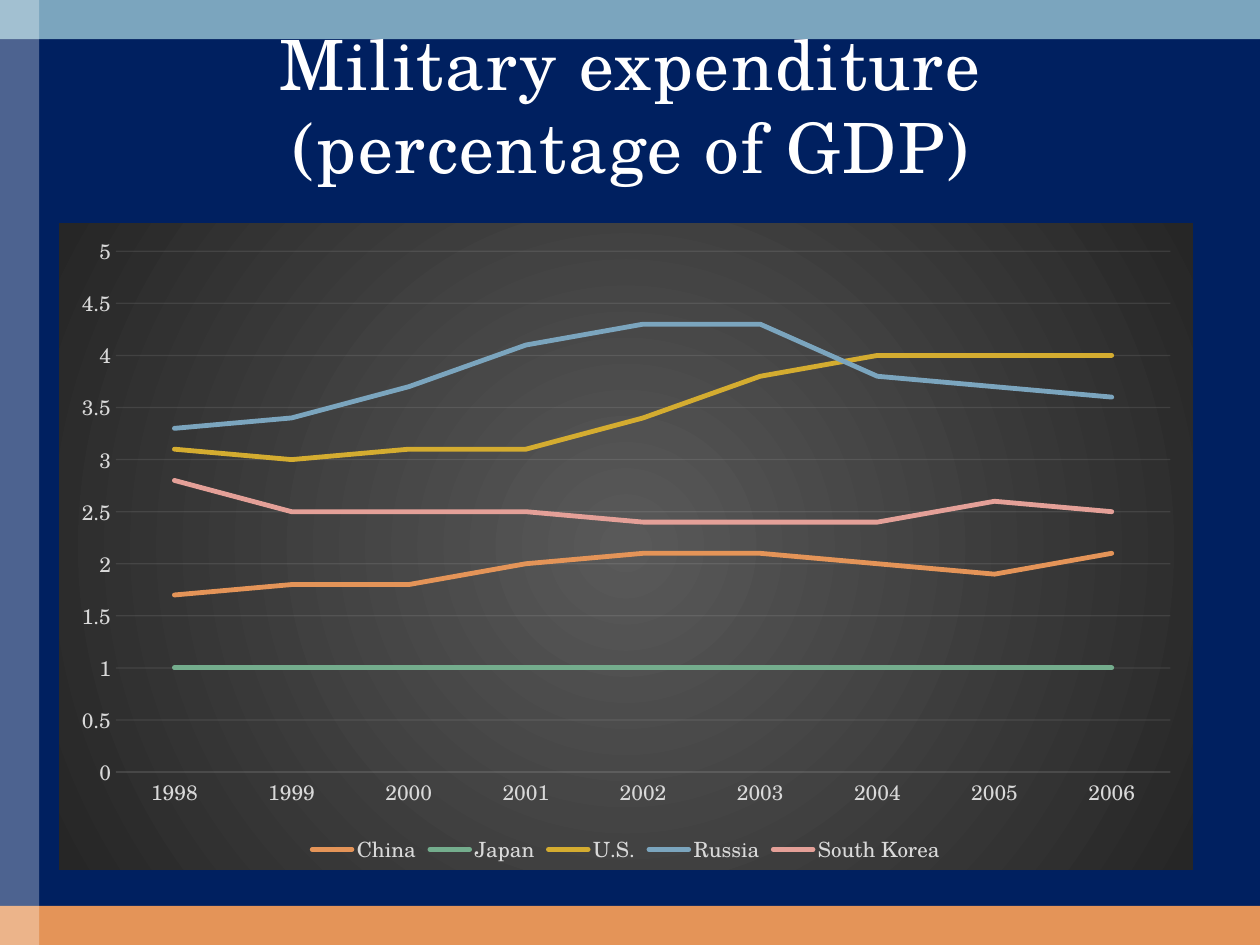
from lxml import etree
from pptx import Presentation
from pptx.chart.data import CategoryChartData
from pptx.dml.color import RGBColor
from pptx.enum import chart as charts, shapes, text
from pptx.oxml import parse_xml
from pptx.oxml.ns import nsdecls, qn
from pptx.util import Cm, Pt

FONT = "TeX Gyre Schola"
NAVY, WHITE, ORANGE, BLUE = "002060", "FFFFFF", "E49458", "7BA5BE"
LABEL, RULE = "D9D9D9", "F2F2F2"
WIDTH, HEIGHT, BAND = Cm(25.4), Cm(19.05), Cm(0.79)

YEARS = [str(year) for year in range(1998, 2007)]
SPENDING = [
    ("China", ORANGE, [1.7, 1.8, 1.8, 2, 2.1, 2.1, 2, 1.9, 2.1]),
    ("Japan", "74AD8D", [1] * len(YEARS)),
    ("U.S.", "D4AC30", [3.1, 3, 3.1, 3.1, 3.4, 3.8, 4, 4, 4]),
    ("Russia", BLUE, [3.3, 3.4, 3.7, 4.1, 4.3, 4.3, 3.8, 3.7, 3.6]),
    ("South Korea", "E4A098", [2.8, 2.5, 2.5, 2.5, 2.4, 2.4, 2.4, 2.6, 2.5]),
]


def rgb(color):
    return RGBColor.from_string(color)


def set_opacity(parent, color, percent):
    """Make every use of a colour below an XML element translucent."""
    for node in parent.iter(qn("a:srgbClr")):
        if node.get("val") == color:
            etree.SubElement(node, qn("a:alpha")).set("val", str(percent * 1000))


def style_font(font, size, color):
    font.name, font.size = FONT, Pt(size)
    font.color.rgb = rgb(color)


def style_line(line, color, width):
    line.color.rgb = rgb(color)
    line.width = Pt(width)


def add_band(slide, box, color):
    band = slide.shapes.add_shape(shapes.MSO_SHAPE.RECTANGLE, *box)
    band.shadow.inherit = False
    band.fill.solid()
    band.fill.fore_color.rgb = rgb(color)
    band.line.fill.background()
    return band


def add_frame(slide, left, top, width, height):
    """Colour bands along the bottom, top and left edges."""
    add_band(slide, (left, top + height - BAND, width, BAND), ORANGE)
    add_band(slide, (left, top, width, BAND), BLUE)
    side = add_band(slide, (left, top, BAND, height), WHITE)
    set_opacity(side.fill._xPr, WHITE, 30)


def fill_radial(chart, center, edge):
    background = parse_xml(
        f'<c:spPr {nsdecls("c", "a")}><a:gradFill><a:gsLst>'
        f'<a:gs pos="0"><a:srgbClr val="{center}"/></a:gs>'
        f'<a:gs pos="100000"><a:srgbClr val="{edge}"/></a:gs></a:gsLst>'
        '<a:path path="circle"><a:fillToRect l="50000" t="50000" r="50000" b="50000"/>'
        '</a:path></a:gradFill><a:ln><a:noFill/></a:ln></c:spPr>')
    chart._chartSpace.find(qn("c:chart")).addnext(background)


def style_axes(chart):
    years, percent = chart.category_axis, chart.value_axis
    for axis in (years, percent):
        axis.major_tick_mark = axis.minor_tick_mark = charts.XL_TICK_MARK.NONE
        style_font(axis.tick_labels.font, 12, LABEL)
    percent.minimum_scale, percent.maximum_scale, percent.major_unit = 0, 5, 0.5
    percent.format.line.fill.background()
    style_line(years.format.line, RULE, 0.75)
    style_line(percent.major_gridlines.format.line, RULE, 0.75)
    set_opacity(chart._chartSpace, RULE, 10)


def add_spending_chart(slide, left, top, width, height):
    data = CategoryChartData()
    data.categories = YEARS
    for country, _, shares in SPENDING:
        data.add_series(country, shares)
    chart = slide.shapes.add_chart(
        charts.XL_CHART_TYPE.LINE, left, top, width, height, data).chart
    chart.has_title = False
    style_font(chart.font, 10, WHITE)
    fill_radial(chart, "595959", "262626")
    style_axes(chart)

    plot = chart.plots[0]
    plot.vary_by_categories = False
    for series, (_, color, _) in zip(plot.series, SPENDING):
        series.smooth = False
        series.marker.style = charts.XL_MARKER_STYLE.NONE
        style_line(series.format.line, color, 2.75)
        series.format.line._get_or_add_ln().set("cap", "rnd")

    chart.has_legend = True
    chart.legend.position = charts.XL_LEGEND_POSITION.BOTTOM
    chart.legend.include_in_layout = False
    style_font(chart.legend.font, 12, LABEL)


def place_title(slide, left, top, width, height):
    title = slide.shapes.title
    title.left, title.top, title.width, title.height = left, top, width, height
    frame = title.text_frame
    frame.text = "Military expenditure\v(percentage of GDP)"
    frame.word_wrap = True
    frame.auto_size = text.MSO_AUTO_SIZE.NONE
    frame.vertical_anchor = text.MSO_ANCHOR.MIDDLE
    heading = frame.paragraphs[0]
    heading.alignment = text.PP_ALIGN.CENTER
    style_font(heading.font, 39.6, WHITE)
    for run in heading.runs:
        run.font._element.set("spc", "100")
    slide.shapes._spTree.append(title._element)  # in front of the bands


def main():
    deck = Presentation()
    deck.slide_width, deck.slide_height = WIDTH, HEIGHT
    slide = deck.slides.add_slide(deck.slide_layouts[5])
    slide.background.fill.solid()
    slide.background.fill.fore_color.rgb = rgb(NAVY)
    add_frame(slide, 0, 0, WIDTH, HEIGHT)
    add_spending_chart(slide, Cm(1.19), Cm(4.5), Cm(22.86), Cm(13.03))
    place_title(slide, Cm(0.84), Cm(0.79), Cm(23.77), Cm(2.62))
    deck.save("out.pptx")


if __name__ == "__main__":
    main()
